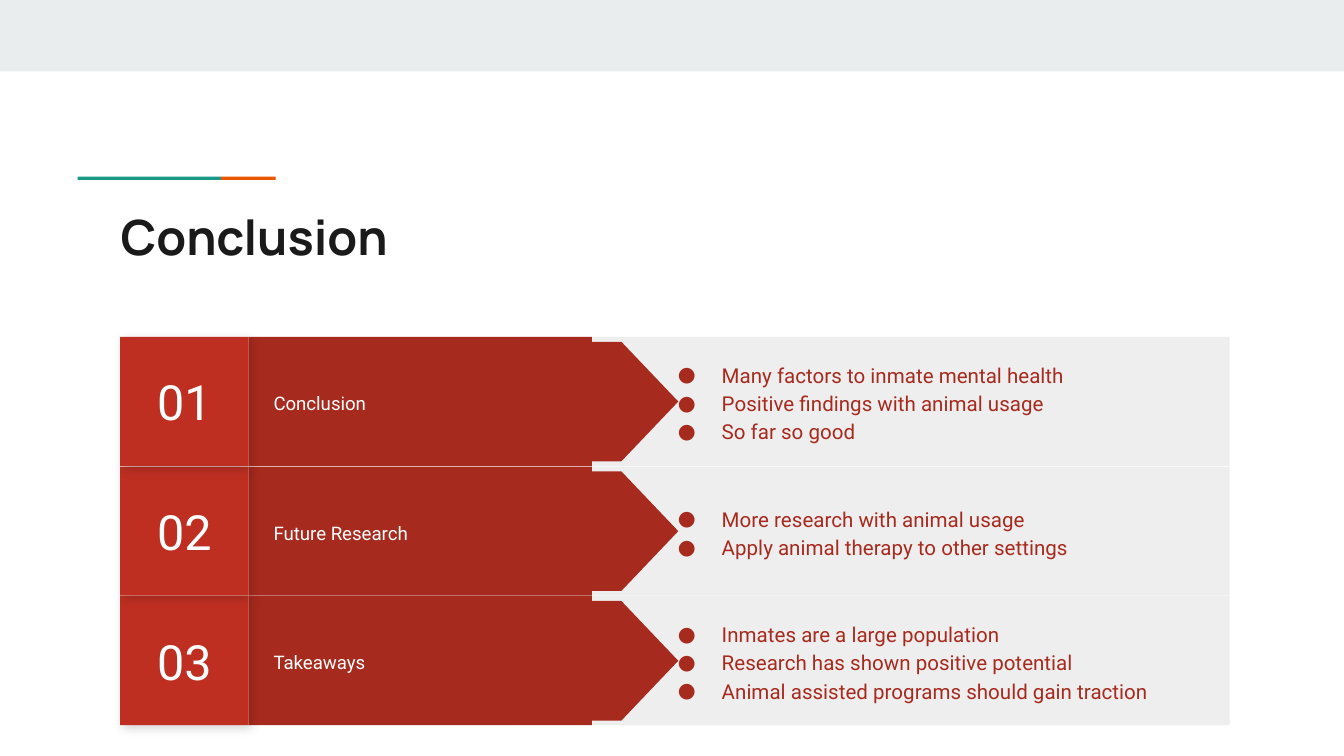
from lxml.etree import SubElement
from pptx import Presentation
from pptx.dml.color import RGBColor
from pptx.enum.shapes import MSO_SHAPE
from pptx.enum.text import MSO_ANCHOR, MSO_AUTO_SIZE, PP_ALIGN
from pptx.oxml.ns import qn
from pptx.util import Cm, Pt

TITLE = "Conclusion"
ROWS = [
    ("01", "Conclusion", [
        "Many factors to inmate mental health",
        "Positive findings with animal usage",
        "So far so good",
    ]),
    ("02", "Future Research", [
        "More research with animal usage",
        "Apply animal therapy to other settings",
    ]),
    ("03", "Takeaways", [
        "Inmates are a large population",
        "Research has shown positive potential",
        "Animal assisted programs should gain traction",
    ]),
]
COLORS = {
    "header": "E9EDEE", "teal": "1A9988", "orange": "EB5600",
    "title": "1A1A1A", "panel": "EEEEEE", "band": "A72A1E",
    "number": "BE2F22", "white": "FFFFFF", "shadow": "000000",
}
SLIDE_WIDTH, SLIDE_HEIGHT = 25.4, 14.29
FIRST_ROW, ROW_PITCH, ROW_HEIGHT = 6.37, 2.45, 2.44
ARROW_CENTER, ARROW_LENGTH, ARROW_THICKNESS = 10.13, 5.38, 2.26
INSET = 0.25


def color(name):
    return RGBColor.from_string(COLORS[name])


def place(box, left, top, width, height):
    box.left, box.top, box.width, box.height = map(Cm, (left, top, width, height))


def add_block(page, kind, fill, left, top, width, height):
    block = page.shapes.add_shape(kind, *map(Cm, (left, top, width, height)))
    block.shadow.inherit = False
    block.fill.solid()
    block.fill.fore_color.rgb = color(fill)
    block.line.fill.background()
    return block


def add_shadow(block):
    effects = block.element.spPr.find(qn("a:effectLst"))
    shadow = SubElement(effects, qn("a:outerShdw"), blurRad=str(Pt(5.6)),
                        dist=str(Pt(2.2)), dir="2700000", algn="bl", rotWithShape="0")
    tone = SubElement(shadow, qn("a:srgbClr"), val=COLORS["shadow"])
    SubElement(tone, qn("a:alpha"), val="17000")


def add_bullet(para, name):
    properties = para._p.get_or_add_pPr()
    properties.set("marL", str(Cm(1.27)))
    properties.set("indent", str(Cm(-0.83)))
    tint = SubElement(properties, qn("a:buClr"))
    SubElement(tint, qn("a:srgbClr"), val=COLORS[name])
    SubElement(properties, qn("a:buFont"), typeface="Roboto")
    SubElement(properties, qn("a:buChar"), char="●")


def write(box, lines, size, name, font="Roboto", bold=False, anchor=MSO_ANCHOR.MIDDLE,
          align=PP_ALIGN.LEFT, spacing=1.0, bullets=False):
    frame = box.text_frame
    frame.word_wrap = True
    frame.auto_size = MSO_AUTO_SIZE.NONE
    frame.vertical_anchor = anchor
    frame.margin_left = frame.margin_right = Cm(INSET)
    frame.margin_top = frame.margin_bottom = Cm(INSET)
    for index, line in enumerate(lines):
        para = frame.add_paragraph() if index else frame.paragraphs[0]
        para.alignment = align
        para.line_spacing = spacing
        para.space_before = para.space_after = Pt(0)
        if bullets:
            add_bullet(para, name)
        span = para.add_run()
        span.text = line
        span.font.name = font
        span.font.size = Pt(size)
        span.font.bold = bold
        span.font.color.rgb = color(name)


def add_row(page, top, number, label, points, points_box):
    add_block(page, MSO_SHAPE.RECTANGLE, "panel", 9.8, top, 13.44, ROW_HEIGHT)
    add_block(page, MSO_SHAPE.RECTANGLE, "band", 4.7, top, 6.49, ROW_HEIGHT)
    arrow = add_block(page, MSO_SHAPE.FLOWCHART_OFFPAGE_CONNECTOR, "band",
                      ARROW_CENTER - ARROW_THICKNESS / 2,
                      top + (ROW_HEIGHT - ARROW_LENGTH) / 2,
                      ARROW_THICKNESS, ARROW_LENGTH)
    arrow.rotation = 270

    label_box = page.shapes.add_textbox(Cm(4.92), Cm(top + 0.28), Cm(6.83), Cm(1.88))
    write(label_box, [label], 10, "white", spacing=1.15)

    number_box = add_block(page, MSO_SHAPE.RECTANGLE, "number", 2.27, top, 2.43, ROW_HEIGHT)
    add_shadow(number_box)
    write(number_box, [number], 26, "white", align=PP_ALIGN.CENTER)

    place(points_box, 12.12, top, 10.46, ROW_HEIGHT)
    write(points_box, points, 11, "band", spacing=1.15, bullets=True)
    page.shapes.element.append(points_box.element)


def main():
    deck = Presentation()
    deck.slide_width, deck.slide_height = Cm(SLIDE_WIDTH), Cm(SLIDE_HEIGHT)
    page = deck.slides.add_slide(deck.slide_layouts.get_by_name("Comparison"))
    title, *point_boxes, spare = list(page.placeholders)
    spare.element.getparent().remove(spare.element)

    add_block(page, MSO_SHAPE.RECTANGLE, "header", 0, 0, SLIDE_WIDTH, 1.35)
    add_block(page, MSO_SHAPE.RECTANGLE, "teal", 1.47, 3.34, 2.71, 0.06)
    add_block(page, MSO_SHAPE.RECTANGLE, "orange", 4.18, 3.34, 1.03, 0.06)

    place(title, 2.03, 3.66, 21.36, 1.5)
    write(title, [TITLE], 26, "title", font="Manrope", bold=True, anchor=MSO_ANCHOR.TOP)

    for index, (row, points_box) in reversed(list(enumerate(zip(ROWS, point_boxes)))):
        add_row(page, FIRST_ROW + index * ROW_PITCH, *row, points_box)

    deck.save("out.pptx")


if __name__ == "__main__":
    main()
